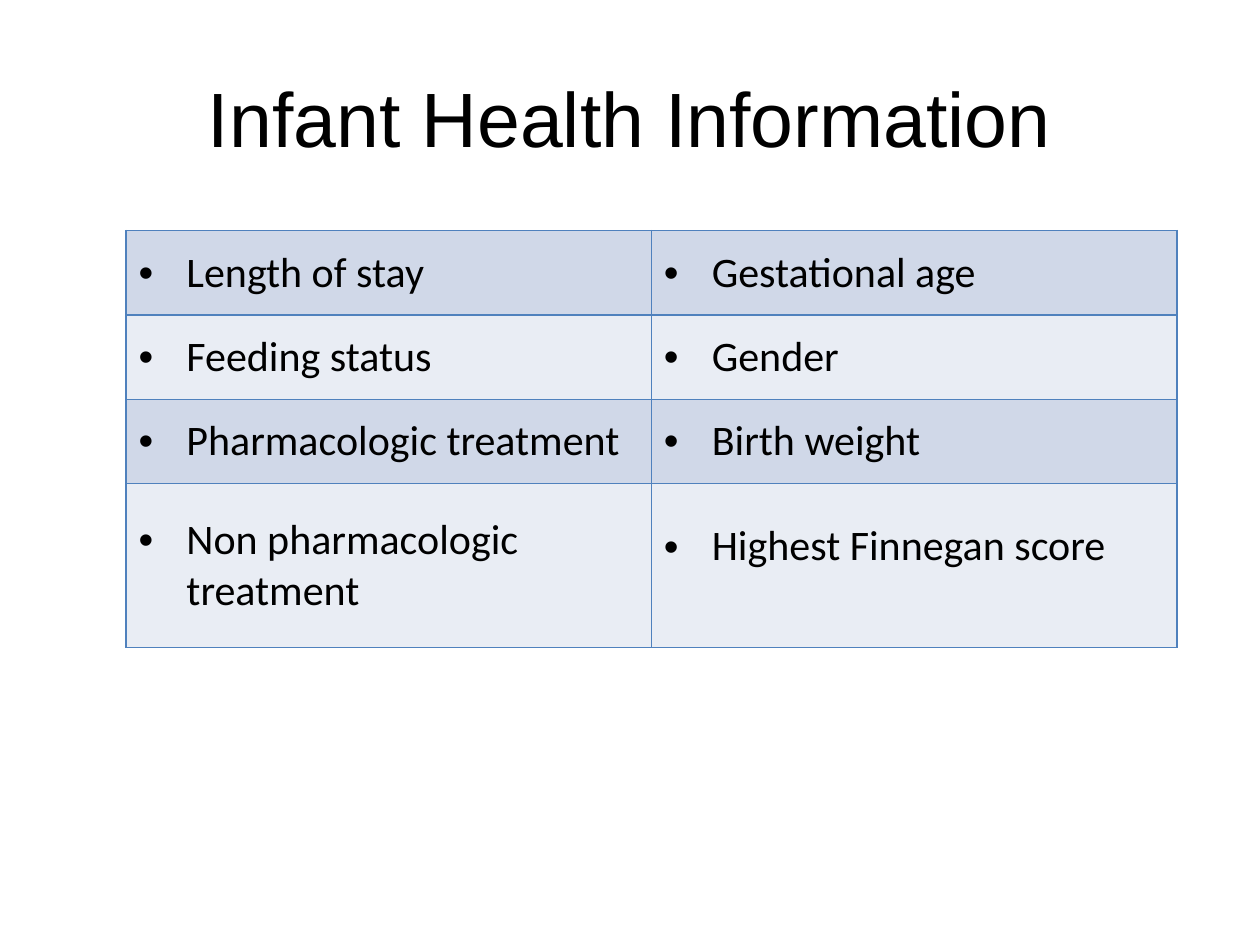
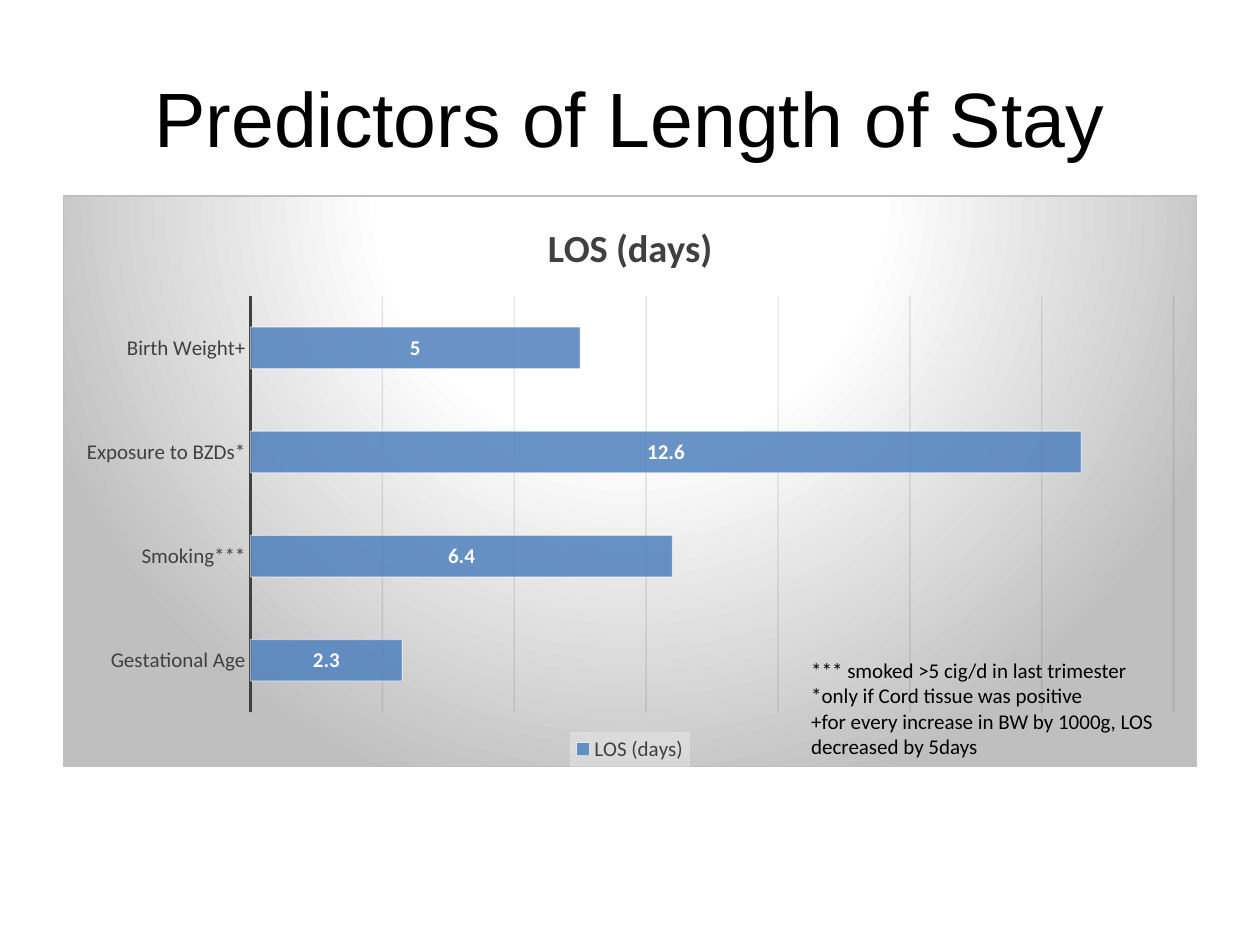
import pptx
import pptx.chart.data
import pptx.dml.color
import pptx.enum.chart
import pptx.enum.text
import pptx.oxml
import pptx.oxml.ns
import pptx.util
from pptx.util import Inches

# Content
HEALTH_TITLE = "Infant Health Information"
HEALTH_ROWS = [
    ("Length of stay", "Gestational age"),
    ("Feeding status", "Gender"),
    ("Pharmacologic treatment", "Birth weight"),
    ("Non pharmacologic treatment", "Highest Finnegan score"),
]
PREDICTOR_TITLE = "Predictors of Length of Stay"
SERIES_NAME = "LOS (days)"
PREDICTORS = {
    "Gestational Age": 2.3,
    "Smoking***": 6.4,
    "Exposure to BZDs*": 12.6,
    "Birth Weight+": 5,
}
FOOTNOTES = [
    "*** smoked >5 cig/d in last trimester",
    "*only if Cord tissue was positive",
    "+for every increase in BW by 1000g, LOS decreased by 5days",
]

# Shared style
TITLE_FONT, BODY_FONT = "Arial", "Calibri"
BLACK, WHITE, DARK_GRAY, SILVER = "000000", "FFFFFF", "404040", "BFBFBF"
BLUE = "4F81BD"
BANDS = ["D0D8E8", "E9EDF4"]
ROW_HEIGHTS = [0.67, 0.67, 0.67, 1.3]
COLUMN_WIDTH = 4.17
NAMESPACES = pptx.oxml.ns.nsdecls("a", "c")


def rgb(value):
    return pptx.dml.color.RGBColor.from_string(value)


def style_font(font, size, color, name=BODY_FONT, bold=False):
    font.name = name
    font.size = pptx.util.Pt(size)
    font.bold = bold
    font.color.rgb = rgb(color)


def add_run(paragraph, text, size, color=BLACK, name=BODY_FONT, bold=False):
    run = paragraph.add_run()
    run.text = text
    style_font(run.font, size, color, name, bold)


def add_text_box(slide, left, top, width, height):
    box = slide.shapes.add_textbox(
        Inches(left), Inches(top), Inches(width), Inches(height))
    box.text_frame.word_wrap = True
    return box.text_frame


def add_titled_slide(presentation, title):
    slide = presentation.slides.add_slide(presentation.slide_layouts[6])
    frame = add_text_box(slide, 0.5, 0.3, 9, 1.25)
    frame.vertical_anchor = pptx.enum.text.MSO_ANCHOR.MIDDLE
    paragraph = frame.paragraphs[0]
    paragraph.alignment = pptx.enum.text.PP_ALIGN.CENTER
    add_run(paragraph, title, 44, name=TITLE_FONT)
    return slide


def parse_xml(xml):
    return pptx.oxml.parse_xml(xml)


def set_alpha(colors, percent):
    for color in colors:
        color.append(parse_xml(f'<a:alpha {NAMESPACES} val="{percent * 1000}"/>'))


def set_line(line, color, width):
    line.color.rgb = rgb(color)
    line.width = pptx.util.Pt(width)


# Table of infant health items
def fill_cell(cell, text, band):
    properties = cell._tc.get_or_add_tcPr()
    for side in "LRTB":
        properties.append(parse_xml(
            f'<a:ln{side} {NAMESPACES} w="12700"><a:solidFill>'
            f'<a:srgbClr val="{BLUE}"/></a:solidFill></a:ln{side}>'))
    cell.fill.solid()
    cell.fill.fore_color.rgb = rgb(band)
    cell.vertical_anchor = pptx.enum.text.MSO_ANCHOR.MIDDLE
    paragraph = cell.text_frame.paragraphs[0]
    bullet_properties = paragraph._p.get_or_add_pPr()
    bullet_properties.set("marL", str(Inches(0.38)))
    bullet_properties.set("indent", str(-Inches(0.38)))
    bullet_properties.append(parse_xml(
        f'<a:buFont {NAMESPACES} typeface="{TITLE_FONT}"/>'))
    bullet_properties.append(parse_xml(f'<a:buChar {NAMESPACES} char="•"/>'))
    add_run(paragraph, text, 24)


def add_health_table(slide):
    table = slide.shapes.add_table(
        len(HEALTH_ROWS), 2, Inches(1), Inches(1.83),
        Inches(2 * COLUMN_WIDTH), Inches(sum(ROW_HEIGHTS))).table
    table.first_row = table.horz_banding = False
    for column in table.columns:
        column.width = Inches(COLUMN_WIDTH)
    for row_index, texts in enumerate(HEALTH_ROWS):
        table.rows[row_index].height = Inches(ROW_HEIGHTS[row_index])
        for column_index, text in enumerate(texts):
            fill_cell(table.cell(row_index, column_index), text,
                      BANDS[row_index % 2])
    # The last item sits a little above the middle of its cell
    table.cell(len(HEALTH_ROWS) - 1, 1).margin_bottom = Inches(0.35)


# Chart of predictors
def shade_chart(chart):
    stops = "".join(
        f'<a:gs pos="{position * 1000}"><a:srgbClr val="{color}"/></a:gs>'
        for position, color in [(0, WHITE), (39, WHITE), (100, SILVER)])
    background = parse_xml(
        f'<c:spPr {NAMESPACES}><a:gradFill><a:gsLst>{stops}</a:gsLst>'
        '<a:path path="circle"><a:fillToRect l="50000" t="-80000" r="50000" '
        'b="180000"/></a:path></a:gradFill><a:ln w="9525"><a:solidFill>'
        f'<a:srgbClr val="{SILVER}"/></a:solidFill></a:ln></c:spPr>')
    chart.element.xpath("./c:txPr")[0].addprevious(background)


def place_plot_area(chart, **fractions):
    values = "".join(f'<c:{key} val="{value}"/>'
                     for key, value in fractions.items())
    plot_area = chart.element.xpath("./c:chart/c:plotArea")[0]
    for layout in plot_area.xpath("./c:layout"):
        plot_area.remove(layout)
    plot_area.insert(0, parse_xml(
        f'<c:layout {NAMESPACES}><c:manualLayout><c:layoutTarget val="inner"/>'
        f'<c:xMode val="edge"/><c:yMode val="edge"/>{values}'
        '</c:manualLayout></c:layout>'))


def add_predictor_chart(slide):
    data = pptx.chart.data.CategoryChartData()
    data.categories = list(PREDICTORS)
    data.add_series(SERIES_NAME, list(PREDICTORS.values()))
    chart = slide.shapes.add_chart(
        pptx.enum.chart.XL_CHART_TYPE.BAR_STACKED, Inches(0.5), Inches(1.55),
        Inches(9), Inches(4.54), data).chart
    style_font(chart.font, 10, BLACK)
    shade_chart(chart)
    place_plot_area(chart, x=0.165, y=0.175, w=0.815, h=0.73)
    add_run(chart.chart_title.text_frame.paragraphs[0],
            SERIES_NAME, 22, DARK_GRAY, bold=True)

    # Bars and their values
    plot = chart.plots[0]
    plot.vary_by_categories = False
    plot.gap_width = 150
    plot.overlap = 100
    series = plot.series[0]
    series.format.fill.solid()
    series.format.fill.fore_color.rgb = rgb(BLUE)
    set_line(series.format.line, WHITE, 0.75)
    set_alpha(series._element.xpath("./c:spPr/a:solidFill/a:srgbClr"), 85)
    set_alpha(series._element.xpath("./c:spPr/a:ln//a:srgbClr"), 50)
    labels = series.data_labels
    labels.show_value = True
    labels.position = pptx.enum.chart.XL_LABEL_POSITION.CENTER
    style_font(labels.font, 12, WHITE, bold=True)

    # Axes
    category_axis = chart.category_axis
    category_axis.major_tick_mark = pptx.enum.chart.XL_TICK_MARK.NONE
    category_axis.has_major_gridlines = False
    style_font(category_axis.tick_labels.font, 12, DARK_GRAY)
    set_line(category_axis.format.line, DARK_GRAY, 1.5)
    value_axis = chart.value_axis
    value_axis.minimum_scale, value_axis.maximum_scale = 0, 14
    value_axis.major_unit = 2
    value_axis.has_major_gridlines = True
    set_line(value_axis.major_gridlines.format.line, "0D0D0D", 0.75)
    set_alpha(value_axis._element.xpath("./c:majorGridlines//a:srgbClr"), 10)
    value_axis.visible = False

    # Legend on a pale, see-through panel
    chart.has_legend = True
    legend = chart.legend
    legend.position = pptx.enum.chart.XL_LEGEND_POSITION.BOTTOM
    legend.include_in_layout = False
    style_font(legend.font, 12, DARK_GRAY)
    panel = parse_xml(
        f'<c:spPr {NAMESPACES}><a:solidFill><a:srgbClr val="F2F2F2">'
        '<a:alpha val="39000"/></a:srgbClr></a:solidFill></c:spPr>')
    legend._element.xpath("./c:txPr")[0].addprevious(panel)


def add_footnotes(slide):
    frame = add_text_box(slide, 6.34, 5.17, 3.47, 1.11)
    for index, note in enumerate(FOOTNOTES):
        paragraph = frame.add_paragraph() if index else frame.paragraphs[0]
        add_run(paragraph, note, 12)


def main():
    presentation = pptx.Presentation()
    presentation.slide_width = Inches(10)
    presentation.slide_height = Inches(7.5)
    add_health_table(add_titled_slide(presentation, HEALTH_TITLE))
    predictor_slide = add_titled_slide(presentation, PREDICTOR_TITLE)
    add_predictor_chart(predictor_slide)
    add_footnotes(predictor_slide)
    presentation.save("out.pptx")


if __name__ == "__main__":
    main()
